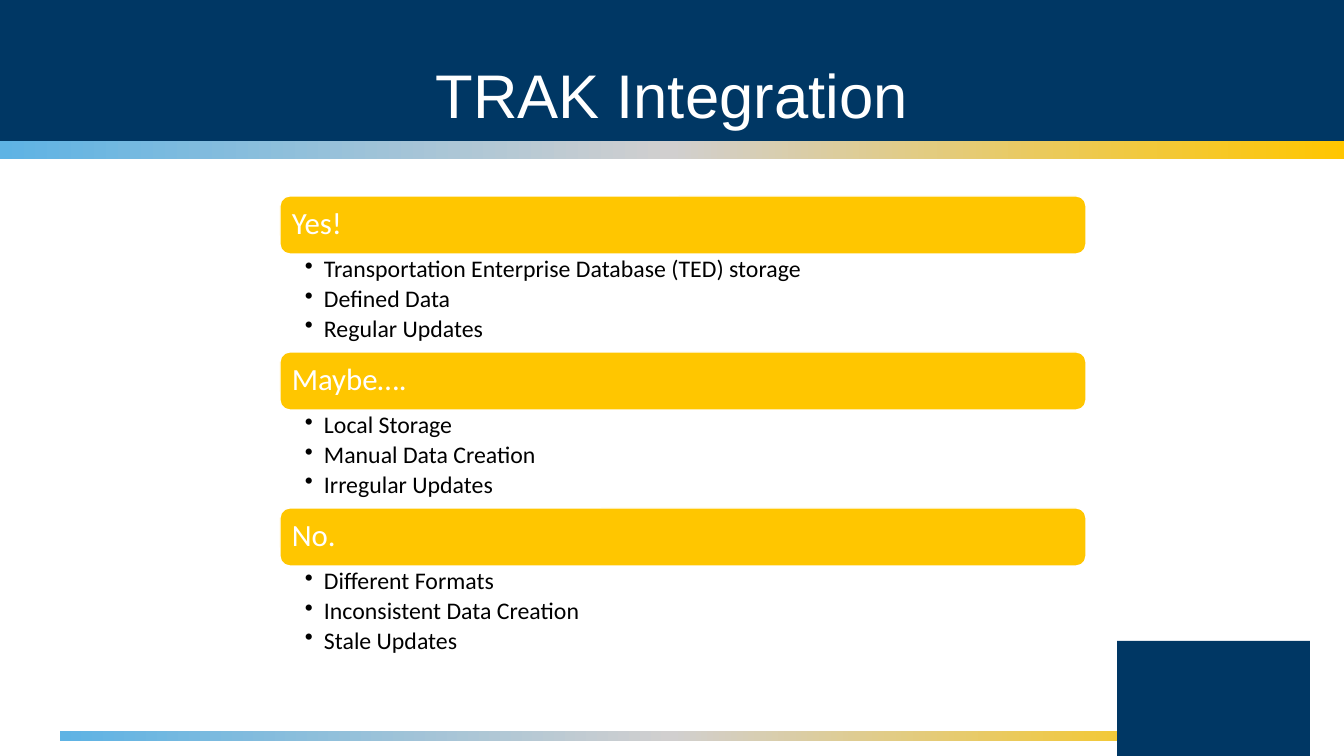
import copy

import pptx
import pptx.dml.color
import pptx.enum.shapes
import pptx.enum.text
import pptx.oxml
import pptx.oxml.ns
import pptx.util

EMU_PER_PX = 914400 / 100.8
SHAPE = pptx.enum.shapes.MSO_SHAPE
ANCHOR = pptx.enum.text.MSO_ANCHOR
ALIGN = pptx.enum.text.PP_ALIGN

COLORS = {
    "navy": "003764",
    "sky": "5EB3E4",
    "gray": "D1CFCF",
    "gold": "FFC600",
    "white": "FFFFFF",
    "black": "000000",
}
STRIPE_COLORS = ["sky", "gray", "gold"]

ANSWERS = [
    ("Yes!", ["Transportation Enterprise Database (TED) storage",
              "Defined Data", "Regular Updates"]),
    ("Maybe….", ["Local Storage", "Manual Data Creation", "Irregular Updates"]),
    ("No.", ["Different Formats", "Inconsistent Data Creation", "Stale Updates"]),
]
LIST_LEFT, LIST_TOP, LIST_WIDTH = 280, 196, 806
HEADING_HEIGHT, BULLETS_HEIGHT = 58, 98


def px(length):
    return pptx.util.Emu(round(length * EMU_PER_PX))


def rgb(name):
    return pptx.dml.color.RGBColor.from_string(COLORS[name])


def add_block(page, box, color, kind=SHAPE.RECTANGLE):
    shape = page.shapes.add_shape(kind, *map(px, box))
    shape.shadow.inherit = False
    shape.fill.solid()
    shape.fill.fore_color.rgb = rgb(color)
    shape.line.fill.background()
    return shape


def add_stripe(page, box):
    stripe = add_block(page, box, "gold")
    stripe.fill.gradient()
    stripe.fill.gradient_angle = 0
    # A new gradient has two stops; add the third
    stop_list = stripe.fill.gradient_stops[0].color and next(
        stripe.element.iter(pptx.oxml.ns.qn("a:gsLst")))
    stop_list.append(copy.deepcopy(stop_list[0]))
    for index, color in enumerate(STRIPE_COLORS):
        stop = stripe.fill.gradient_stops[index]
        stop.position = index / (len(STRIPE_COLORS) - 1)
        stop.color.rgb = rgb(color)


def set_frame(shape, insets, anchor):
    frame = shape.text_frame
    frame.word_wrap = True
    frame.vertical_anchor = anchor
    (frame.margin_left, frame.margin_top,
     frame.margin_right, frame.margin_bottom) = map(px, insets)
    return frame


def style_paragraph(para, font, size, color, align=ALIGN.LEFT):
    para.alignment = align
    para.line_spacing = 0.9
    para.font.name = font
    para.font.size = pptx.util.Pt(size)
    para.font.color.rgb = rgb(color)


def add_bullet(para, indent):
    properties = para._p.get_or_add_pPr()
    properties.set("marL", str(px(indent)))
    properties.set("indent", str(-px(indent)))
    bullet = pptx.oxml.parse_xml(
        f'<a:buChar {pptx.oxml.ns.nsdecls("a")} char="•"/>')
    properties.append(bullet)


def add_title(page, text):
    box = page.shapes.add_textbox(px(0), px(39), px(1344), px(120))
    frame = set_frame(box, (10, 5, 10, 5), ANCHOR.MIDDLE)
    frame.text = text
    style_paragraph(frame.paragraphs[0], "Arial", 44, "white", ALIGN.CENTER)


def add_heading(page, top, text):
    bar = add_block(page, (LIST_LEFT, top, LIST_WIDTH, HEADING_HEIGHT),
                    "gold", SHAPE.ROUNDED_RECTANGLE)
    bar.line.color.rgb = rgb("white")
    bar.line.width = pptx.util.Pt(1)
    frame = set_frame(bar, (9, 9, 9, 9), ANCHOR.MIDDLE)
    frame.text = text
    style_paragraph(frame.paragraphs[0], "Calibri", 22, "white")


def add_bullets(page, top, items):
    box = page.shapes.add_textbox(px(LIST_LEFT), px(top),
                                  px(LIST_WIDTH), px(BULLETS_HEIGHT))
    frame = set_frame(box, (25, 3, 17, 3), ANCHOR.TOP)
    frame.text = "\n".join(items)
    for para in frame.paragraphs:
        add_bullet(para, 19)
        style_paragraph(para, "Calibri", 17, "black")
        para.space_after = pptx.util.Pt(3)


def main():
    deck = pptx.Presentation()
    deck.slide_width, deck.slide_height = px(1344), px(756)
    page = deck.slides.add_slide(deck.slide_layouts[6])

    # Header band, stripes and corner block
    add_block(page, (0, 0, 1344, 141), "navy")
    add_stripe(page, (0, 141, 1344, 18))
    add_stripe(page, (60, 731, 1224, 10))
    add_block(page, (1117, 641, 193, 119), "navy")

    # Answers, each a heading over its bullets
    for index, (heading, items) in enumerate(ANSWERS):
        top = LIST_TOP + index * (HEADING_HEIGHT + BULLETS_HEIGHT)
        add_heading(page, top, heading)
        add_bullets(page, top + HEADING_HEIGHT, items)

    add_title(page, "TRAK Integration")
    deck.save("out.pptx")


if __name__ == "__main__":
    main()
